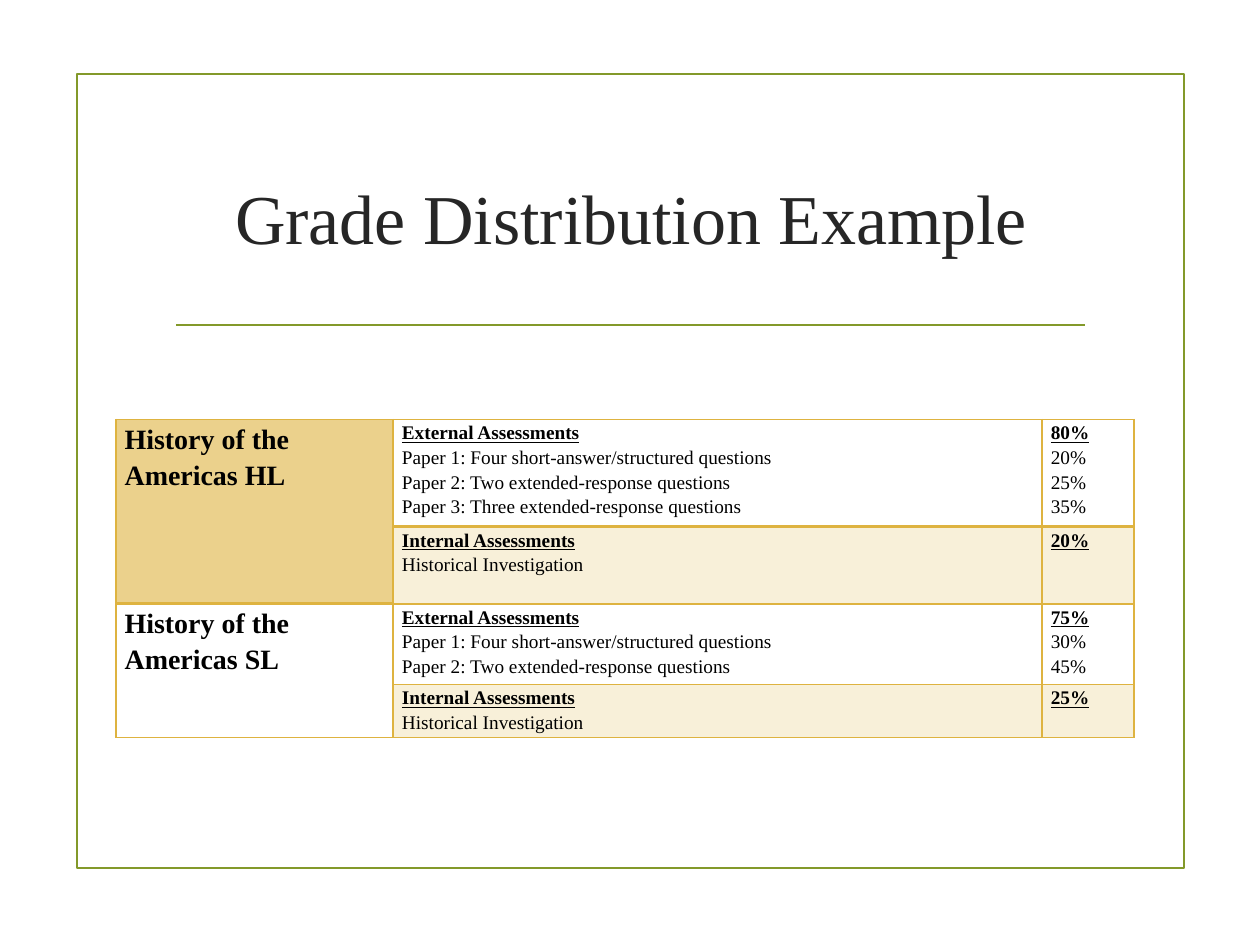
from lxml import etree
from pptx import Presentation
from pptx.dml.color import RGBColor
from pptx.enum.shapes import MSO_CONNECTOR, MSO_SHAPE
from pptx.enum.text import MSO_ANCHOR, PP_ALIGN
from pptx.oxml.ns import qn
from pptx.util import Inches, Pt

RECTANGLE = MSO_SHAPE.RECTANGLE
STRAIGHT = MSO_CONNECTOR.STRAIGHT
MIDDLE = MSO_ANCHOR.MIDDLE
CENTER = PP_ALIGN.CENTER

GREEN = RGBColor(0x83, 0x99, 0x2A)
GOLD = RGBColor(0xDE, 0xB3, 0x40)
LIGHT_GOLD = RGBColor(0xEB, 0xD1, 0x8C)
PALE_GOLD = RGBColor(0xF8, 0xF0, 0xD9)
CHARCOAL = RGBColor(0x26, 0x26, 0x26)
BLACK = RGBColor(0, 0, 0)
FONT = "Times New Roman"

COLUMN_WIDTHS = [2.2, 5.15, 0.73]
ROW_HEIGHTS = [0.85, 0.57, 0.64, 0.42]
PAPERS = [
    "Paper 1: Four short-answer/structured questions",
    "Paper 2: Two extended-response questions",
    "Paper 3: Three extended-response questions",
]
INTERNAL = ["Internal Assessments", "Historical Investigation"]
COURSES = [
    ("History of the Americas HL", LIGHT_GOLD, PAPERS, ["80%", "20%", "25%", "35%"], "20%"),
    ("History of the Americas SL", None, PAPERS[:2], ["75%", "30%", "45%"], "25%"),
]


def format_text(paragraph, size, color, bold=False, underline=False):
    for run in paragraph.runs:
        font = run.font
        font.name = FONT
        font.size = Pt(size)
        font.color.rgb = color
        font.bold = bold
        font.underline = underline


def add_frame(slide, left, top, width, height):
    frame = slide.shapes.add_shape(RECTANGLE, left, top, width, height)
    frame.shadow.inherit = False
    frame.fill.background()
    frame.line.color.rgb = GREEN
    frame.line.width = Pt(1.25)


def add_divider(slide, left, top, width):
    divider = slide.shapes.add_connector(STRAIGHT, left, top, left + width, top)
    divider.line.color.rgb = GREEN
    divider.line.width = Pt(1.25)
    etree.SubElement(divider._element.spPr, qn("a:effectLst"))


def add_title(slide, left, top, width, height):
    text_frame = slide.shapes.add_textbox(left, top, width, height).text_frame
    text_frame.word_wrap = True
    text_frame.vertical_anchor = MIDDLE
    text_frame.text = "Grade Distribution Example"
    paragraph = text_frame.paragraphs[0]
    paragraph.alignment = CENTER
    format_text(paragraph, 40, CHARCOAL)


def set_borders(cell, bottom_width):
    properties = cell._tc.get_or_add_tcPr()
    for side, width in (("L", 1), ("R", 1), ("T", 1), ("B", bottom_width)):
        border = etree.SubElement(properties, qn(f"a:ln{side}"), w=str(Pt(width)))
        solid_fill = etree.SubElement(border, qn("a:solidFill"))
        etree.SubElement(solid_fill, qn("a:srgbClr"), val=str(GOLD))


def style_cell(cell, fill_color, bottom_width=1):
    set_borders(cell, bottom_width)
    cell.margin_left = cell.margin_right = Inches(0.07)
    cell.margin_top = cell.margin_bottom = 0
    if fill_color is None:
        cell.fill.background()
    else:
        cell.fill.solid()
        cell.fill.fore_color.rgb = fill_color


def write_cell(cell, lines, size, underline_heading):
    cell.text_frame.text = "\n".join(lines)
    for index, paragraph in enumerate(cell.text_frame.paragraphs):
        heading = index == 0
        paragraph.line_spacing = 1.15
        format_text(paragraph, size, BLACK, heading, heading and underline_heading)


def add_grade_table(slide, left, top, width, height):
    table = slide.shapes.add_table(
        len(ROW_HEIGHTS), len(COLUMN_WIDTHS), left, top, width, height
    ).table
    table.first_row = False
    table.horz_banding = False
    for column, share in zip(table.columns, COLUMN_WIDTHS):
        column.width = int(width * share / sum(COLUMN_WIDTHS))
    for row, share in zip(table.rows, ROW_HEIGHTS):
        row.height = int(height * share / sum(ROW_HEIGHTS))

    for index, (course, color, papers, weights, internal_weight) in enumerate(COURSES):
        external_row = 2 * index
        internal_row = external_row + 1
        bottom_width = 2 if index == 0 else 1
        course_cell = table.cell(external_row, 0)
        course_cell.merge(table.cell(internal_row, 0))
        write_cell(course_cell, [course], 16, False)
        for row in (external_row, internal_row):
            style_cell(table.cell(row, 0), color, bottom_width)

        sections = [
            (external_row, ["External Assessments"] + papers, weights, None, bottom_width),
            (internal_row, INTERNAL, [internal_weight], PALE_GOLD, 1),
        ]
        for row, descriptions, percentages, fill_color, border_width in sections:
            for column, lines in enumerate((descriptions, percentages), start=1):
                cell = table.cell(row, column)
                style_cell(cell, fill_color, border_width)
                write_cell(cell, lines, 11, True)


def main():
    presentation = Presentation()
    presentation.slide_width = Inches(10)
    presentation.slide_height = Inches(7.5)
    slide = presentation.slides.add_slide(presentation.slide_layouts[6])
    add_frame(slide, Inches(0.61), Inches(0.59), Inches(8.79), Inches(6.3))
    add_divider(slide, Inches(1.4), Inches(2.58), Inches(7.21))
    add_title(slide, Inches(1.29), Inches(1), Inches(7.44), Inches(1.43))
    add_grade_table(slide, Inches(0.92), Inches(3.33), Inches(8.08), Inches(2.48))
    presentation.save("out.pptx")


if __name__ == "__main__":
    main()
